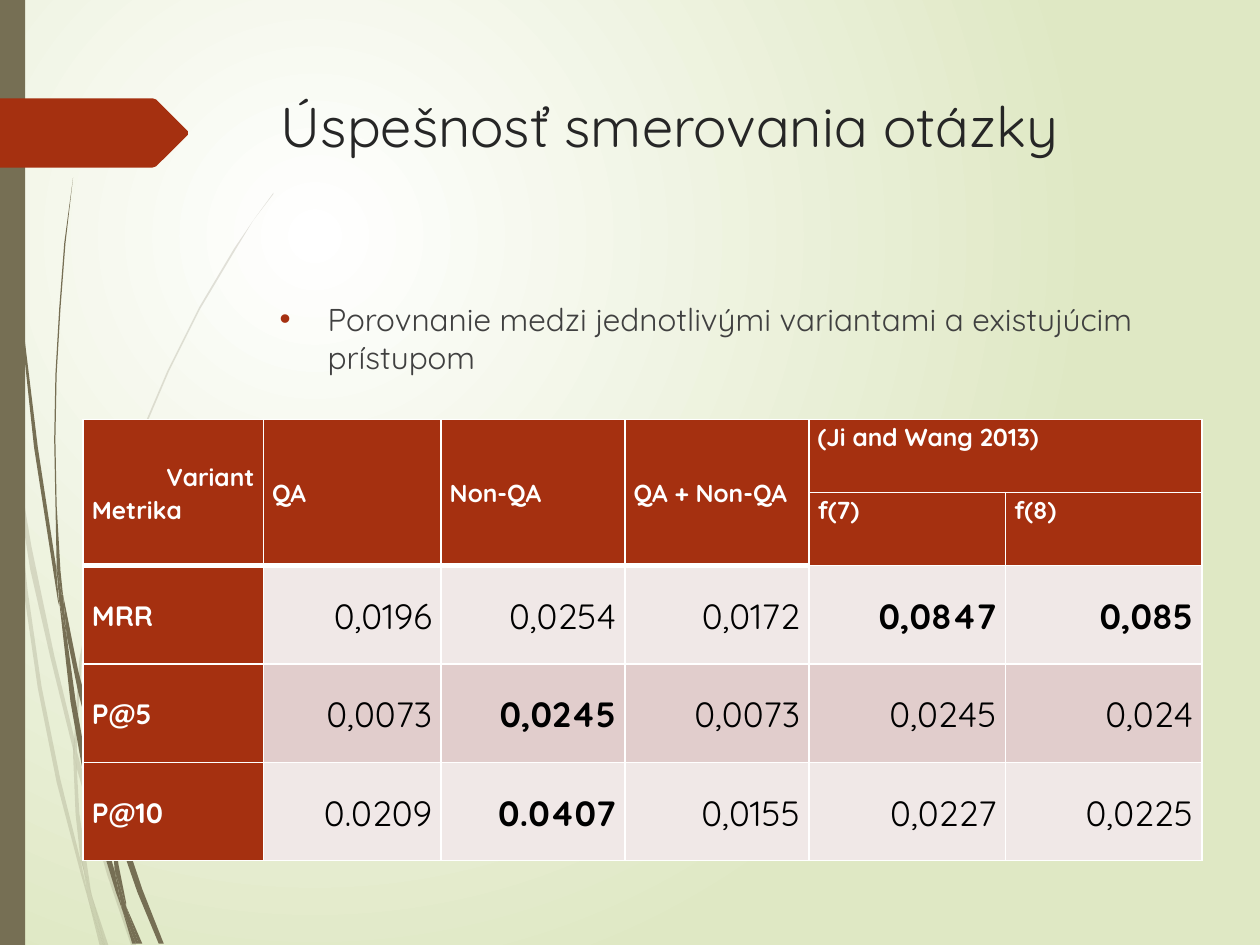
from lxml.etree import SubElement
from pptx import Presentation
from pptx.dml.color import RGBColor
from pptx.enum.shapes import MSO_SHAPE
from pptx.enum.text import MSO_ANCHOR, MSO_AUTO_SIZE, PP_ALIGN
from pptx.oxml import parse_xml
from pptx.oxml.ns import nsdecls, qn
from pptx.util import Inches, Pt

COLORS = {
    "white": "FFFFFF", "meadow": "DFE8C4", "olive": "766F54", "rust": "A53010",
    "title": "262626", "body": "404040", "black": "000000",
    "light": "F0E8E7", "dark": "E1CDCC",
}
COLUMNS, ROWS = 1000, 750
FAINT_WISPS = [
    [(8, 350), (6, 322), (0, 282), (0, 299), (7, 344)],
    [(40, 522), (59, 599), (59, 586), (43, 520), (25, 434), (10, 345), (12, 376), (24, 452)],
    [(64, 607), (61, 596), (61, 610), (85, 694), (104, 750), (108, 750), (88, 692)],
    [(83, 750), (86, 750), (73, 711)],
    [(64, 683), (48, 619), (33, 545), (22, 469), (12, 376), (8, 350), (12, 412), (19, 470),
     (30, 546), (45, 621), (64, 693), (70, 714), (69, 707)],
    [(58, 599), (60, 646), (64, 683), (67, 692), (73, 711), (72, 706), (63, 646), (61, 610),
     (61, 608)],
    [(61, 584), (65, 523), (76, 462), (92, 405), (111, 349), (134, 295), (159, 245),
     (187, 198), (201, 175), (217, 154), (217, 153), (201, 175), (186, 197), (158, 244),
     (133, 294), (110, 348), (91, 404), (75, 461), (63, 523), (59, 584), (59, 586), (61, 596)],
    [(70, 714), (79, 750), (82, 750)],
    [(61, 608), (61, 610), (61, 596), (59, 586), (58, 599)],
    [(67, 692), (65, 683), (69, 707), (70, 714), (82, 750), (83, 750), (73, 711)],
]
STRONG_WISPS = [
    [(5, 110), (14, 233), (27, 355), (46, 477), (47, 481), (45, 457), (45, 453), (30, 355),
     (15, 232), (6, 109), (4, 48), (3, 0), (2, 0), (3, 48)],
    [(73, 592), (88, 645), (88, 633), (88, 631), (77, 590), (62, 532), (50, 472), (53, 505),
     (62, 549)],
    [(94, 649), (91, 641), (91, 656), (109, 708), (126, 749), (130, 749), (113, 706)],
    [(91, 691), (81, 657), (69, 607), (60, 556), (53, 505), (47, 477), (56, 557), (65, 608),
     (77, 659), (92, 708), (97, 722), (96, 717)],
    [(50, 472), (48, 453), (45, 401), (44, 349), (45, 297), (48, 245), (52, 193), (58, 141),
     (51, 193), (47, 245), (44, 297), (43, 349), (45, 449), (49, 472)],
    [(110, 749), (113, 749), (100, 719)],
    [(47, 477), (53, 505), (50, 472), (49, 472), (45, 449), (45, 453)],
    [(91, 633), (95, 592), (103, 552), (115, 513), (131, 476), (149, 440), (169, 406),
     (191, 374), (203, 359), (216, 344), (215, 344), (203, 358), (191, 373), (168, 405),
     (147, 439), (129, 474), (113, 511), (101, 551), (92, 590), (88, 631), (91, 641)],
    [(97, 722), (105, 749), (108, 749)],
    [(88, 645), (91, 691), (96, 706), (100, 719), (100, 716), (94, 686), (91, 656), (90, 651)],
    [(88, 645), (90, 651), (91, 656), (91, 641), (88, 631), (88, 633)],
    [(96, 706), (91, 691), (96, 717), (97, 722), (108, 749), (110, 749), (100, 719)],
]
ARROW = [(0, 78), (121, 78), (124, 79), (149, 104), (149, 107), (124, 132), (121, 133), (0, 133)]
VARIANTS = ["QA", "Non-QA", "QA + Non-QA"]
METRICS = {
    "MRR": ["0,0196", "0,0254", "0,0172", "0,0847", "0,085"],
    "P@5": ["0,0073", "0,0245", "0,0073", "0,0245", "0,024"],
    "P@10": ["0.0209", "0.0407", "0,0155", "0,0227", "0,0225"],
}
BEST = {("MRR", 3), ("MRR", 4), ("P@5", 1), ("P@10", 1)}


class Deck:
    font = "Quicksand"

    def __init__(self):
        self.prs = Presentation()
        self.prs.slide_width, self.prs.slide_height = Inches(10), Inches(7.5)
        self.unit = self.prs.slide_width // COLUMNS
        self.slide = self.prs.slides.add_slide(self.prs.slide_layouts[1])
        self.shapes = self.slide.shapes

    def color(self, name):
        return RGBColor.from_string(COLORS[name])

    def units(self, *lengths):
        return [length * self.unit for length in lengths]

    def background(self, center, edge):
        fill = self.slide.background.fill
        fill.gradient()
        for stop, name, position in zip(fill.gradient_stops, (center, edge), (0, 1)):
            stop.color.rgb = self.color(name)
            stop.position = position
        gradient = self.slide.element.find(".//" + qn("a:gradFill"))
        gradient.remove(gradient.find(qn("a:lin")))
        circle = SubElement(gradient, qn("a:path"), path="circle")
        SubElement(circle, qn("a:fillToRect"), l="50000", t="50000", r="100000", b="100000")

    def paint(self, shape, fill, alpha=None):
        shape.shadow.inherit = False
        shape.fill.solid()
        shape.fill.fore_color.rgb = self.color(fill)
        shape.line.fill.background()
        if alpha:
            tint = shape.element.spPr.find(".//" + qn("a:srgbClr"))
            SubElement(tint, qn("a:alpha"), val=str(alpha * 1000))

    def outline(self, points, fill, alpha=None, parent=None):
        builder = (parent or self.shapes).build_freeform(*points[0], scale=self.unit)
        builder.add_line_segments(points[1:], close=True)
        self.paint(builder.convert_to_shape(), fill, alpha)

    def wisps(self, outlines, fill, alpha=None):
        group = self.shapes.add_group_shape()
        for points in outlines:
            self.outline(points, fill, alpha, group.shapes)

    def bar(self, box, fill):
        self.paint(self.shapes.add_shape(MSO_SHAPE.RECTANGLE, *self.units(*box)), fill)

    def run(self, paragraph, text, size, color, bold=False):
        run = paragraph.add_run()
        run.text = text
        run.font.name, run.font.size, run.font.bold = self.font, Pt(size), bold
        run.font.color.rgb = self.color(color)

    def placeholder(self, index, box, text, size, color):
        holder = self.slide.placeholders[index]
        holder.left, holder.top, holder.width, holder.height = self.units(*box)
        self.shapes.element.append(holder.element)
        frame = holder.text_frame
        frame.word_wrap, frame.auto_size = True, MSO_AUTO_SIZE.NONE
        frame.vertical_anchor = MSO_ANCHOR.TOP
        paragraph = frame.paragraphs[0]
        paragraph.alignment = PP_ALIGN.LEFT
        self.run(paragraph, text, size, color)
        return paragraph

    def bullet(self, paragraph, indent, color):
        paragraph.space_before = Pt(10)
        props = paragraph._p.get_or_add_pPr()
        props.set("marL", str(indent * self.unit))
        props.set("indent", str(-indent * self.unit))
        tint = SubElement(props, qn("a:buClr"))
        SubElement(tint, qn("a:srgbClr"), val=COLORS[color])
        SubElement(props, qn("a:buFont"), typeface="Arial")
        SubElement(props, qn("a:buChar"), char="•")

    def table(self, left, top, widths, heights):
        box = self.units(left, top, sum(widths), sum(heights))
        table = self.shapes.add_table(len(heights), len(widths), *box).table
        for column, width in zip(table.columns, widths):
            column.width = width * self.unit
        for row, height in zip(table.rows, heights):
            row.height = height * self.unit
        return table

    def cell(self, cell, fill, bottom=1):
        cell.fill.solid()
        cell.fill.fore_color.rgb = self.color(fill)
        cell.margin_left = cell.margin_right = 7 * self.unit
        cell.margin_top = cell.margin_bottom = 0
        for place, (side, width) in enumerate(zip("LRTB", (1, 1, 1, bottom))):
            cell._tc.tcPr.insert(place, parse_xml(
                f'<a:ln{side} {nsdecls("a")} w="{Pt(width)}"><a:solidFill>'
                f'<a:srgbClr val="{COLORS["white"]}"/></a:solidFill></a:ln{side}>'))

    def label(self, cell, lines, size, color="white", bold=True, anchor=MSO_ANCHOR.MIDDLE):
        cell.vertical_anchor = anchor
        for place, (text, align) in enumerate(lines):
            frame = cell.text_frame
            paragraph = frame.add_paragraph() if place else frame.paragraphs[0]
            paragraph.alignment, paragraph.line_spacing = align, 1.07
            self.run(paragraph, text, size, color, bold)


def fill_results(deck):
    left, right = PP_ALIGN.LEFT, PP_ALIGN.RIGHT
    results = deck.table(66, 333, [143, 141, 146, 146, 156, 156], [58, 58, 78, 78, 78])
    for row in range(5):
        for column in range(6):
            header = row < 2 or column == 0
            fill = "rust" if header else "dark" if row == 3 else "light"
            deck.cell(results.cell(row, column), fill, 3 if row < 2 and column < 4 else 1)
    for column in range(4):
        results.cell(0, column).merge(results.cell(1, column))
    results.cell(0, 4).merge(results.cell(0, 5))

    deck.label(results.cell(0, 0), [("Variant", right), ("Metrika", left)], 14)
    for column, variant in enumerate(VARIANTS, 1):
        deck.label(results.cell(0, column), [(variant, left)], 14)
    for row, column, text in [(0, 4, "(Ji and Wang 2013)"), (1, 4, "f(7)"), (1, 5, "f(8)")]:
        deck.label(results.cell(row, column), [(text, left)], 14, anchor=MSO_ANCHOR.TOP)
    for row, (metric, scores) in enumerate(METRICS.items(), 2):
        deck.label(results.cell(row, 0), [(metric, left)], 16)
        for place, score in enumerate(scores):
            deck.label(results.cell(row, place + 1), [(score, right)], 20, "black",
                       (metric, place) in BEST)


def main():
    deck = Deck()
    deck.background("white", "meadow")
    deck.wisps(FAINT_WISPS, "olive", 20)
    deck.wisps(STRONG_WISPS, "olive")
    deck.bar((0, 0, 20, ROWS), "olive")
    deck.outline(ARROW, "rust")
    deck.placeholder(0, (213, 68, 721, 140), "Úspešnosť smerovania otázky", 32, "title")
    fill_results(deck)
    comparison = deck.placeholder(
        1, (212, 233, 721, 413),
        "Porovnanie medzi jednotlivými variantami a existujúcim prístupom", 18, "body")
    deck.bullet(comparison, 38, "rust")
    deck.prs.save("out.pptx")


if __name__ == "__main__":
    main()
